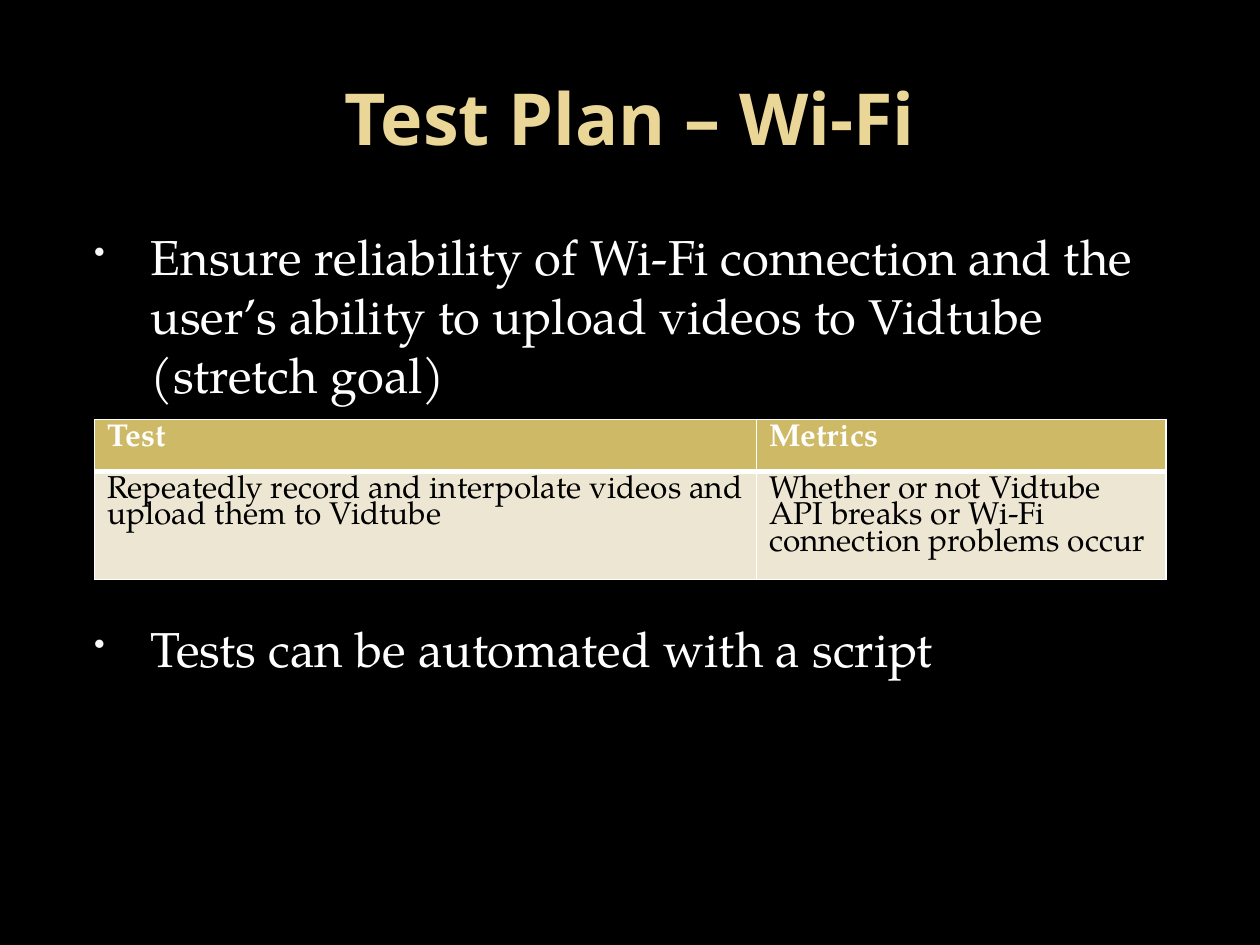
from dataclasses import dataclass

from lxml.etree import SubElement
from pptx import Presentation
from pptx.dml.color import RGBColor
from pptx.enum.text import MSO_ANCHOR, PP_ALIGN
from pptx.oxml.ns import qn
from pptx.util import Cm, Pt

BLACK = RGBColor(0x00, 0x00, 0x00)
WHITE = RGBColor(0xFF, 0xFF, 0xFF)
PALE_GOLD = RGBColor(0xEA, 0xD6, 0x96)
GOLD = RGBColor(0xCE, 0xB9, 0x66)
CREAM = RGBColor(0xED, 0xE6, 0xD3)
BULLET_GREY = RGBColor(0xF9, 0xF9, 0xF9)

HEADING_FONT = "Open Sans"
BODY_FONT = "TeX Gyre Pagella"


@dataclass
class Bullet:
    text: str
    space_before: float


@dataclass
class Row:
    texts: tuple[str, ...]
    height: float
    fill: RGBColor
    color: RGBColor
    bold: bool
    bottom_line: float


BULLETS = (
    Bullet("Ensure reliability of Wi-Fi connection and the user’s ability "
           "to upload videos to Vidtube (stretch goal)", 5.6),
    Bullet("Tests can be automated with a script", 123),  # room for the table
)
COLUMN_WIDTHS = (13.34, 8.26)
ROWS = (
    Row(("Test", "Metrics"), 1.04, GOLD, WHITE, True, 3),
    Row(("Repeatedly record and interpolate videos and upload them to Vidtube",
         "Whether or not Vidtube API breaks or Wi-Fi connection problems occur"),
        2.18, CREAM, BLACK, False, 1),
)


def write(para, text: str, *, size: float, color: RGBColor,
          font: str = BODY_FONT, bold: bool = False, align=PP_ALIGN.LEFT,
          space_before: float = 0, line_spacing: float = 1.0) -> None:
    para.alignment = align
    para.space_before = Pt(space_before)
    para.line_spacing = line_spacing
    span = para.add_run()
    span.text = text
    span.font.name = font
    span.font.size = Pt(size)
    span.font.bold = bold
    span.font.color.rgb = color


def add_bullet_mark(para) -> None:
    properties = para._p.get_or_add_pPr()
    properties.set("marL", str(Cm(1.52)))
    properties.set("indent", str(Cm(-1.14)))
    color = SubElement(properties, qn("a:buClr"))
    SubElement(color, qn("a:srgbClr"), val=str(BULLET_GREY))
    SubElement(properties, qn("a:buSzPct"), val="65000")
    SubElement(properties, qn("a:buChar"), char="•")


def add_bullets(page, bullets: tuple[Bullet, ...]) -> None:
    box = page.shapes.add_textbox(Cm(1.27), Cm(4.45), Cm(22.86), Cm(13.08))
    frame = box.text_frame
    frame.word_wrap = True
    for index, bullet in enumerate(bullets):
        para = frame.add_paragraph() if index else frame.paragraphs[0]
        write(para, bullet.text, size=28, color=WHITE,
              space_before=bullet.space_before)
        add_bullet_mark(para)


def set_borders(cell, widths: dict[str, float]) -> None:
    properties = cell._tc.get_or_add_tcPr()
    for index, (side, width) in enumerate(widths.items()):
        line = SubElement(properties, qn(f"a:{side}"), w=str(Pt(width)))
        fill = SubElement(line, qn("a:solidFill"))
        SubElement(fill, qn("a:srgbClr"), val=str(WHITE))
        properties.insert(index, line)  # borders come before the fill


def add_test_table(page, rows: tuple[Row, ...]) -> None:
    table = page.shapes.add_table(
        len(rows), len(COLUMN_WIDTHS), Cm(1.91), Cm(8.46),
        Cm(sum(COLUMN_WIDTHS)), Cm(sum(row.height for row in rows))).table
    for column, width in zip(table.columns, COLUMN_WIDTHS):
        column.width = Cm(width)
    top_line = 1
    for index, row in enumerate(rows):
        table.rows[index].height = Cm(row.height)
        for cell, text in zip(table.rows[index].cells, row.texts):
            cell.fill.solid()
            cell.fill.fore_color.rgb = row.fill
            write(cell.text_frame.paragraphs[0], text, size=18,
                  color=row.color, bold=row.bold, line_spacing=0.83)
            set_borders(cell, {"lnL": 1, "lnR": 1, "lnT": top_line,
                               "lnB": row.bottom_line})
        top_line = row.bottom_line


def main() -> None:
    deck = Presentation()
    deck.slide_width, deck.slide_height = Cm(25.4), Cm(19.05)
    page = deck.slides.add_slide(deck.slide_layouts[5])
    page.background.fill.solid()
    page.background.fill.fore_color.rgb = BLACK

    # Title
    title = page.shapes.title
    title.left, title.top = Cm(1.27), Cm(0.76)
    title.width, title.height = Cm(22.86), Cm(3.18)
    title.text_frame.vertical_anchor = MSO_ANCHOR.MIDDLE
    write(title.text_frame.paragraphs[0], "Test Plan – Wi-Fi", size=41,
          color=PALE_GOLD, font=HEADING_FONT, bold=True, align=PP_ALIGN.CENTER)

    # Bullets, with the table between them
    add_bullets(page, BULLETS)
    add_test_table(page, ROWS)

    deck.save("out.pptx")


if __name__ == "__main__":
    main()
